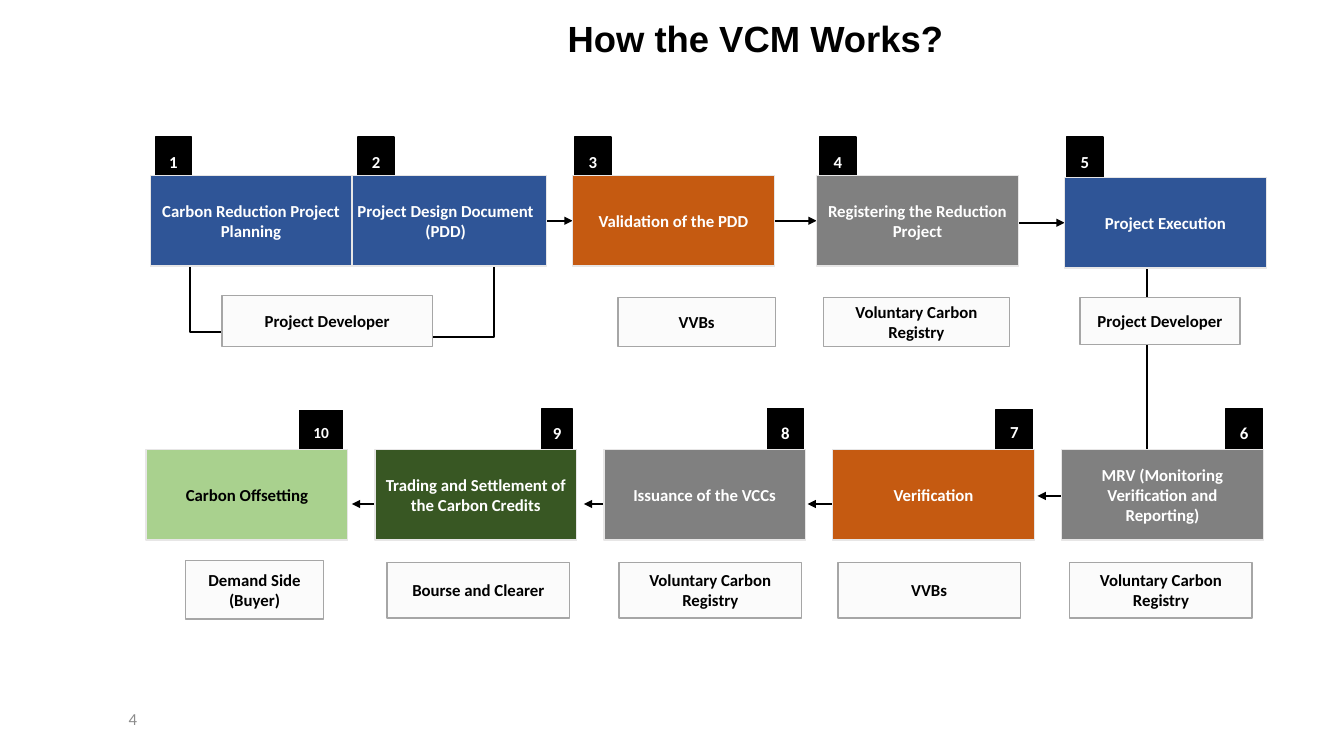
from dataclasses import dataclass
from typing import Optional

import lxml.etree
import pptx
import pptx.dml.color
import pptx.enum.shapes
import pptx.enum.text
import pptx.oxml.ns
import pptx.shapes.autoshape
import pptx.shapes.connector
import pptx.slide
import pptx.text.text
import pptx.util

EMU_PER_PX = 9144
STEP_WIDTH, STEP_HEIGHT = 200, 90
UPPER_TOP, LOWER_TOP = 174, 446
LOWER_RIGHT_LEFT, LOWER_PITCH = 1053, 227


@dataclass(frozen=True)
class Theme:
    black: str = "000000"
    white: str = "FFFFFF"
    blue: str = "2F5597"
    orange: str = "C55A11"
    gray: str = "808080"
    light_green: str = "A9D18E"
    dark_green: str = "385723"
    step_line: str = "E7E6E6"
    label_fill: str = "FBFBFB"
    label_line: str = "A6A6A6"
    page_number: str = "8C8C8C"
    title_font: str = "Arial"
    body_font: str = "Calibri"
    title_size: int = 26
    body_size: int = 12
    small_size: int = 11
    line_width: float = 1
    connector_width: float = 1.5


THEME = Theme()


@dataclass(frozen=True)
class Step:
    number: int
    text: str
    left: int
    top: int
    fill: str
    color: str = THEME.white


@dataclass(frozen=True)
class Badge:
    number: int
    left: int
    top: int
    width: int = 36
    height: int = 49
    size: int = THEME.body_size


@dataclass(frozen=True)
class Label:
    text: str
    left: int
    top: int
    width: int
    height: int


@dataclass(frozen=True)
class Arrow:
    begin_x: int
    end_x: int
    y: int
    target: Optional[int] = None


@dataclass(frozen=True)
class Elbow:
    begin: tuple[int, int]
    end: tuple[int, int]
    adjustment: int
    rotation: int = 0
    has_head: bool = True


def lower_left(column: int) -> int:
    return LOWER_RIGHT_LEFT - column * LOWER_PITCH


STEPS = [
    Step(2, "Project Design Document (PDD)", 342, UPPER_TOP, THEME.blue),
    Step(1, "Carbon Reduction Project Planning", 149, UPPER_TOP, THEME.blue),
    Step(3, "Validation of the PDD", 568, UPPER_TOP, THEME.orange),
    Step(4, "Registering the Reduction Project", 810, UPPER_TOP, THEME.gray),
    Step(5, "Project Execution", 1056, UPPER_TOP + 2, THEME.blue),
    Step(6, "MRV (Monitoring Verification and Reporting)", lower_left(0), LOWER_TOP, THEME.gray),
    Step(7, "Verification", lower_left(1), LOWER_TOP, THEME.orange),
    Step(8, "Issuance of the VCCs", lower_left(2), LOWER_TOP, THEME.gray),
    Step(9, "Trading and Settlement of the Carbon Credits", lower_left(3), LOWER_TOP, THEME.dark_green),
    Step(10, "Carbon Offsetting", lower_left(4), LOWER_TOP, THEME.light_green, THEME.black),
]

BADGES = [
    Badge(1, 154, 136),
    Badge(2, 355, 136),
    Badge(3, 570, 136),
    Badge(4, 813, 136),
    Badge(5, 1058, 136),
    Badge(6, 1216, 405),
    Badge(7, 988, 406, height=45),
    Badge(8, 761, 405),
    Badge(9, 537, 406, 31, 46),
    Badge(10, 297, 407, 43, 44, THEME.small_size),
]

LABELS = [
    Label("Project Developer", 220, 293, 209, 51),
    Label("VVBs", 613, 295, 156, 49),
    Label("Voluntary Carbon Registry", 817, 295, 184, 49),
    Label("Project Developer", 1071, 295, 159, 47),
    Label("Demand Side (Buyer)", 184, 556, 137, 58),
    Label("Bourse and Clearer", 384, 558, 181, 55),
    Label("Voluntary Carbon Registry", 614, 558, 181, 55),
    Label("VVBs", 831, 558, 181, 55),
    Label("Voluntary Carbon Registry", 1061, 558, 181, 55),
]

ARROWS = [
    Arrow(478, 568, 219, target=3),
    Arrow(723, 810, 219, target=4),
    Arrow(967, 1056, 221, target=5),
    Arrow(1103, 1029, 492),
    Arrow(874, 801, 500),
    Arrow(652, 579, 500),
    Arrow(422, 349, 500),
]

ELBOWS = [
    Elbow((1337, 286), (1044, 392), 110700, rotation=270, has_head=False),
    Elbow((210, 242), (362, 329), -14400),
    Elbow((455, 240), (354, 334), -34800),
]


def px(length: int) -> pptx.util.Emu:
    return pptx.util.Emu(length * EMU_PER_PX)


def rgb(color: str) -> pptx.dml.color.RGBColor:
    return pptx.dml.color.RGBColor.from_string(color)


def set_text(text_frame: pptx.text.text.TextFrame, text: str, font_name: str, size: int,
             color: str, bold: bool = True,
             alignment: pptx.enum.text.PP_ALIGN = pptx.enum.text.PP_ALIGN.CENTER,
             anchor: pptx.enum.text.MSO_ANCHOR = pptx.enum.text.MSO_ANCHOR.MIDDLE) -> None:
    text_frame.text = text
    text_frame.word_wrap = True
    text_frame.vertical_anchor = anchor
    paragraph = text_frame.paragraphs[0]
    paragraph.alignment = alignment
    font = paragraph.runs[0].font
    font.name, font.size, font.bold = font_name, pptx.util.Pt(size), bold
    font.color.rgb = rgb(color)


def add_box(slide: pptx.slide.Slide, text: str, left: int, top: int, width: int, height: int,
            fill: str, line: str, color: str,
            size: int = THEME.body_size) -> pptx.shapes.autoshape.Shape:
    shape = slide.shapes.add_shape(pptx.enum.shapes.MSO_SHAPE.RECTANGLE,
                                   px(left), px(top), px(width), px(height))
    shape.shadow.inherit = False
    shape.fill.solid()
    shape.fill.fore_color.rgb = rgb(fill)
    shape.line.color.rgb = rgb(line)
    shape.line.width = pptx.util.Pt(THEME.line_width)
    set_text(shape.text_frame, text, THEME.body_font, size, color)
    return shape


def add_line(slide: pptx.slide.Slide, kind: pptx.enum.shapes.MSO_CONNECTOR, begin: tuple[int, int],
             end: tuple[int, int], has_head: bool = True) -> pptx.shapes.connector.Connector:
    connector = slide.shapes.add_connector(kind, *map(px, begin + end))
    connector.line.color.rgb = rgb(THEME.black)
    connector.line.width = pptx.util.Pt(THEME.connector_width)
    qn = pptx.oxml.ns.qn
    properties = connector._element.spPr
    if has_head:
        lxml.etree.SubElement(properties.find(qn("a:ln")), qn("a:tailEnd"), type="triangle")
    lxml.etree.SubElement(properties, qn("a:effectLst"))
    return connector


def add_elbow(slide: pptx.slide.Slide, elbow: Elbow) -> None:
    connector = add_line(slide, pptx.enum.shapes.MSO_CONNECTOR.ELBOW,
                         elbow.begin, elbow.end, elbow.has_head)
    qn = pptx.oxml.ns.qn
    properties = connector._element.spPr
    if elbow.rotation:
        properties.find(qn("a:xfrm")).set("rot", str(elbow.rotation * 60000))
    adjustments = properties.find(qn("a:prstGeom")).find(qn("a:avLst"))
    lxml.etree.SubElement(adjustments, qn("a:gd"), name="adj1", fmla=f"val {elbow.adjustment}")


def add_title_and_page_number(slide: pptx.slide.Slide) -> None:
    title = slide.shapes.title
    title.left, title.top, title.width, title.height = map(px, (385, 11, 729, 54))
    set_text(title.text_frame, "How the VCM Works?", THEME.title_font, THEME.title_size,
             THEME.black, anchor=pptx.enum.text.MSO_ANCHOR.TOP)
    page_number = slide.shapes.add_textbox(*map(px, (46, 693, 100, 40)))
    set_text(page_number.text_frame, "4", THEME.body_font, THEME.body_size, THEME.page_number,
             bold=False, alignment=pptx.enum.text.PP_ALIGN.RIGHT)


def main() -> None:
    presentation = pptx.Presentation()
    presentation.slide_width, presentation.slide_height = px(1333), px(750)
    slide = presentation.slides.add_slide(presentation.slide_layouts.get_by_name("Title Only"))
    add_title_and_page_number(slide)

    straight = pptx.enum.shapes.MSO_CONNECTOR.STRAIGHT
    connectors = [add_line(slide, straight, (arrow.begin_x, arrow.y), (arrow.end_x, arrow.y))
                  for arrow in ARROWS]
    for elbow in ELBOWS:
        add_elbow(slide, elbow)
    for label in LABELS:
        add_box(slide, label.text, label.left, label.top, label.width, label.height,
                THEME.label_fill, THEME.label_line, THEME.black)
    for badge in BADGES:
        add_box(slide, str(badge.number), badge.left, badge.top, badge.width, badge.height,
                THEME.black, THEME.black, THEME.white, badge.size)
    step_shapes = {step.number: add_box(slide, step.text, step.left, step.top, STEP_WIDTH,
                                        STEP_HEIGHT, step.fill, THEME.step_line, step.color)
                   for step in STEPS}
    for arrow, connector in zip(ARROWS, connectors):
        if arrow.target is not None:
            connector.end_connect(step_shapes[arrow.target], 1)

    presentation.save("out.pptx")


if __name__ == "__main__":
    main()
